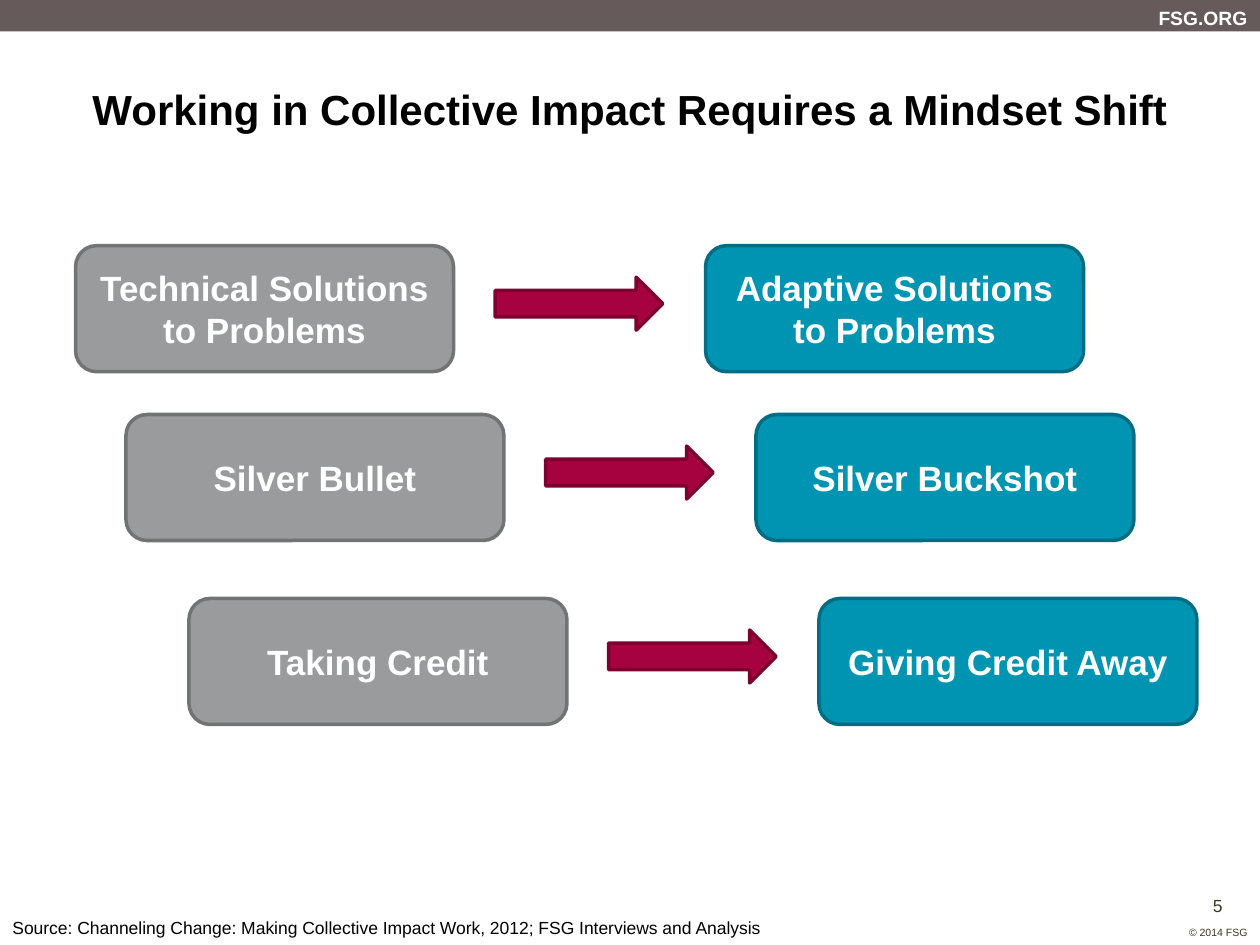
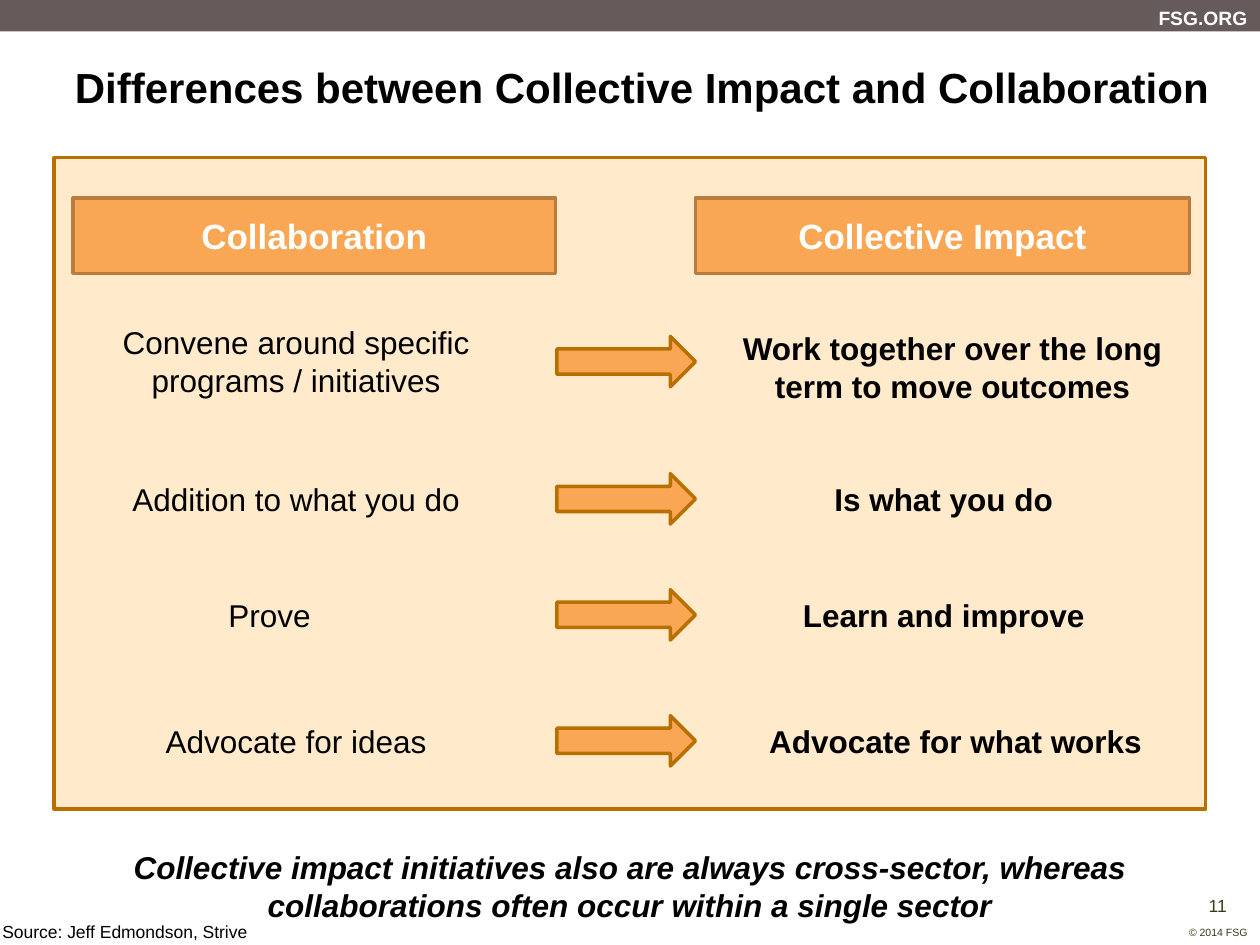
"""Build two slides on the shift from collaboration to collective impact."""
from pptx import Presentation
from pptx.dml.color import RGBColor
from pptx.enum.shapes import MSO_SHAPE
from pptx.enum.text import MSO_ANCHOR, MSO_AUTO_SIZE, PP_ALIGN
from pptx.util import Inches, Pt

deck = Presentation()
deck.slide_width, deck.slide_height = Inches(10), Inches(7.5)
COL, ROW = deck.slide_width / 10, deck.slide_height / 7.5

FONT = "Arial"
WHITE, BLACK, BAND, NOTE = "FFFFFF", "000000", "665A5A", "3B391C"
GREY, TEAL, RED = ("9A9B9C", "727373"), ("0094B3", "006D84"), ("A70240", "7C012F")
CREAM, GOLD, TAN = ("FFEACB", "B96F00"), ("FAA755", "B96F00"), ("FAA755", "B97C3F")
RECT, ROUND, ARROW = MSO_SHAPE.RECTANGLE, MSO_SHAPE.ROUNDED_RECTANGLE, MSO_SHAPE.RIGHT_ARROW
LEFT, MID, RIGHT = PP_ALIGN.LEFT, PP_ALIGN.CENTER, PP_ALIGN.RIGHT


def tint(part, shade):
    """Give a fill or font a solid colour from a hex string."""
    if hasattr(part, "solid"):
        part.solid()
        part.fore_color.rgb = RGBColor.from_string(shade)
    else:
        part.color.rgb = RGBColor.from_string(shade)


def put(slide, kind, box, text="", size=18, shade=BLACK, bold=False, slant=False,
        align=MID, pad=0.05, wrap=True, look=None):
    """Place a title, text box or preset shape on the grid and style it."""
    x, y, w, h = (int(n * unit) for n, unit in zip(box, (COL, ROW, COL, ROW)))
    if kind == "title":
        shape = slide.shapes.title
        shape.left, shape.top, shape.width, shape.height = x, y, w, h
    elif kind == "text":
        shape = slide.shapes.add_textbox(x, y, w, h)
    else:
        shape = slide.shapes.add_shape(kind, x, y, w, h)
        shape.shadow.inherit = False
        tint(shape.fill, look[0])
        tint(shape.line.fill, look[1])
        shape.line.width = Pt(2)
    if text:
        frame = shape.text_frame
        frame.text = text
        frame.word_wrap = wrap
        frame.auto_size = MSO_AUTO_SIZE.NONE
        frame.vertical_anchor = MSO_ANCHOR.MIDDLE
        frame.margin_top = frame.margin_bottom = Inches(pad)
        para = frame.paragraphs[0]
        para.alignment = align
        font = para.font
        font.name, font.size, font.bold, font.italic = FONT, Pt(size), bold, slant
        tint(font, shade)
    return shape


pages = [
    ("5", "Working in Collective Impact Requires a Mindset Shift", (0.43, 0.5, 9.14, 0.72),
     "Source: Channeling Change: Making Collective Impact Work, 2012; FSG Interviews and Analysis",
     (0, 7.23, 9.08, 0.27)),
    ("11", "Differences between Collective Impact and Collaboration", (0.35, 0.33, 9.49, 0.72),
     "Source: Jeff Edmondson, Strive", (-0.08, 7.26, 6.68, 0.27)),
]
for num, head, spot, cite, base in pages:
    slide = deck.slides.add_slide(deck.slide_layouts[5])
    band = put(slide, RECT, (0, 0, 10, 0.25), look=(BAND, BAND))
    band.line.fill.background()
    put(slide, "text", (9.09, 0, 0.91, 0.29), "FSG.ORG", 11, WHITE, True, align=RIGHT, wrap=False)
    put(slide, "text", (9.48, 7.08, 0.37, 0.21), num, 10, NOTE, pad=0.02, wrap=False)
    put(slide, "text", (9.33, 7.3, 0.67, 0.2), "© 2014 FSG", 6, NOTE, align=RIGHT, wrap=False)
    put(slide, "title", spot, head, 24, bold=True, pad=0)
    put(slide, "text", base, cite, 10, align=LEFT)

shift, versus = deck.slides

steps = [
    (0.6, 1.95, "Technical Solutions to Problems", "Adaptive Solutions to Problems"),
    (1, 3.29, "Silver Bullet", "Silver Buckshot"),
    (1.5, 4.75, "Taking Credit", "Giving Credit Away"),
]
for x, y, old, new in steps:
    put(shift, ROUND, (x, y, 3, 1), old, 20, WHITE, True, look=GREY)
    put(shift, ROUND, (x + 5, y, 3, 1), new, 20, WHITE, True, look=TEAL)
    put(shift, ARROW, (x + 3.33, y + 0.25, 1.33, 0.42), look=RED)

put(versus, RECT, (0.43, 1.25, 9.14, 5.17), look=CREAM)
for x, w, head in [(0.58, 3.83, "Collaboration"), (5.52, 3.92, "Collective Impact")]:
    put(versus, RECT, (x, 1.57, w, 0.6), head, 20, WHITE, True, look=TAN)

pairs = [
    (2.67, "Convene around specific programs / initiatives", (0.78, 2.51, 3.14, 0.71),
     "Work together over the long term to move outcomes", (5.79, 2.56, 3.54, 0.71)),
    (3.76, "Addition to what you do", (0.78, 3.76, 3.14, 0.4),
     "Is what you do", (5.92, 3.76, 3.14, 0.4)),
    (4.68, "Prove", (0.78, 4.68, 2.72, 0.4),
     "Learn and improve", (5.92, 4.68, 3.14, 0.4)),
    (5.68, "Advocate for ideas", (0.78, 5.68, 3.14, 0.4),
     "Advocate for what works", (5.92, 5.68, 3.33, 0.4)),
]
for y, old, near, new, far in pairs:
    put(versus, "text", near, old)
    put(versus, "text", far, new, bold=True)
    put(versus, ARROW, (4.42, y, 1.1, 0.4), look=GOLD)

put(versus, "text", (0.43, 6.67, 9.14, 0.72),
    "Collective impact initiatives also are always cross-sector, "
    "whereas collaborations often occur within a single sector",
    bold=True, slant=True, pad=0)

deck.save("out.pptx")
